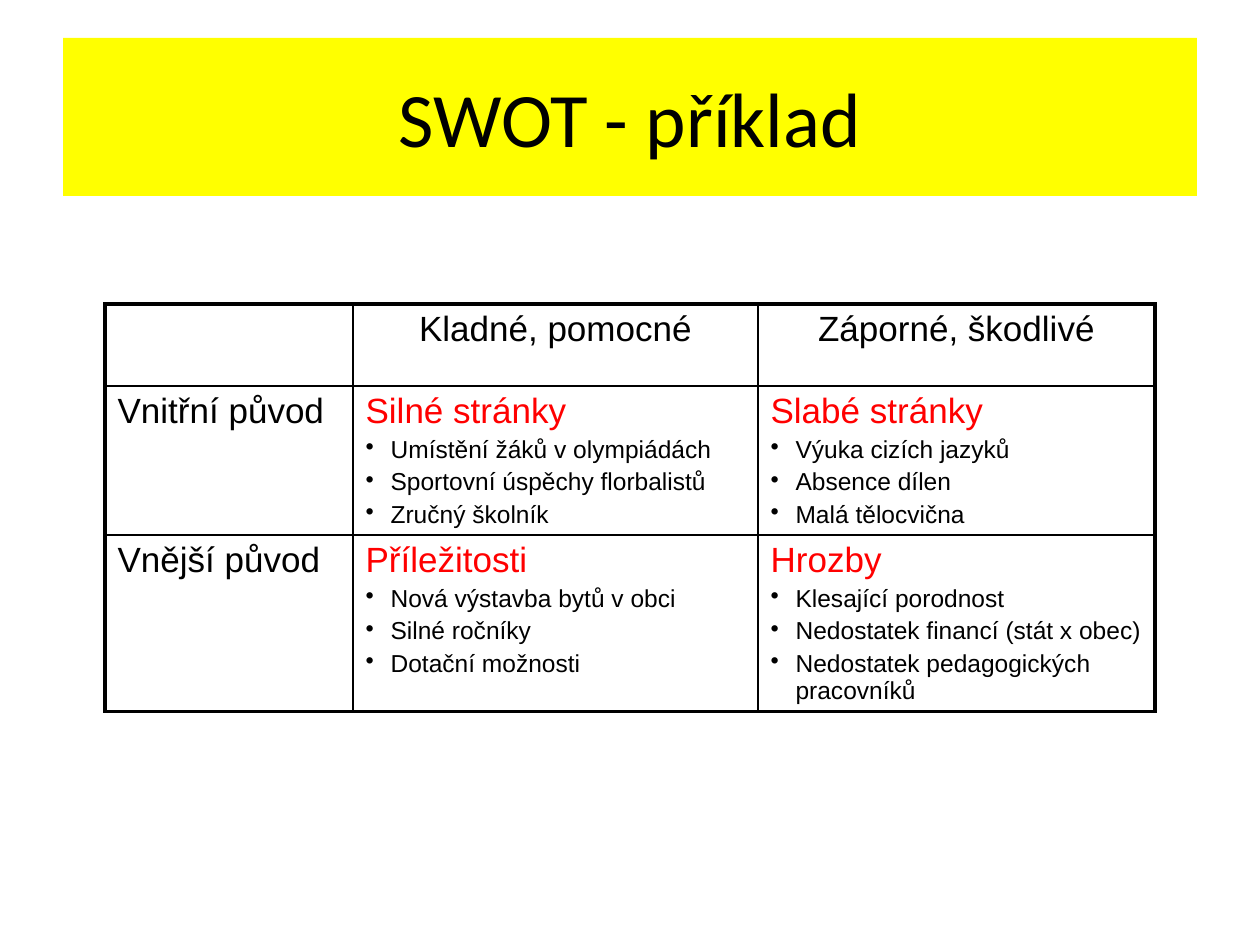
from lxml import etree
from pptx import Presentation
from pptx.dml.color import RGBColor
from pptx.enum.text import MSO_ANCHOR, PP_ALIGN
from pptx.oxml.ns import qn
from pptx.util import Pt

PX = 914400 // 126
CENTER, LEFT, MIDDLE = PP_ALIGN.CENTER, PP_ALIGN.LEFT, MSO_ANCHOR.MIDDLE
YELLOW = RGBColor(0xFF, 0xFF, 0x00)
RED = RGBColor(0xFF, 0x00, 0x00)
BLACK = RGBColor(0x00, 0x00, 0x00)

# Content
TITLE = "SWOT - příklad"
COLUMN_HEADS = ["Kladné, pomocné", "Záporné, škodlivé"]
ORIGINS = [
    ("Vnitřní původ", [
        ("Silné stránky", ["Umístění žáků v olympiádách",
                           "Sportovní úspěchy florbalistů",
                           "Zručný školník"]),
        ("Slabé stránky", ["Výuka cizích jazyků",
                           "Absence dílen",
                           "Malá tělocvična"]),
    ]),
    ("Vnější původ", [
        ("Příležitosti", ["Nová výstavba bytů v obci",
                          "Silné ročníky",
                          "Dotační možnosti"]),
        ("Hrozby", ["Klesající porodnost",
                    "Nedostatek financí (stát x obec)",
                    "Nedostatek pedagogických pracovníků"]),
    ]),
]

# Layout in px
TITLE_BOX = (63, 38, 1134, 158)
TABLE_LEFT, TABLE_TOP, TABLE_HEIGHT = 105, 304, 432
COLUMN_WIDTHS = [248, 405, 397]
ROW_HEIGHTS = [82, 100, 100]
BULLET_INDENT = 25
HEAD_SIZE, ITEM_SIZE = 20, 14
OUTER_LINE, INNER_LINE = 2.25, 1


def write(paragraph, text, size, color=BLACK, font="Arial", align=LEFT, gap=0.2):
    paragraph.text = text
    paragraph.alignment = align
    paragraph.space_before = Pt(size * gap)
    paragraph.font.size = Pt(size)
    paragraph.font.name = font
    paragraph.font.color.rgb = color


def add_bullet(paragraph):
    properties = paragraph._p.get_or_add_pPr()
    properties.set("marL", str(BULLET_INDENT * PX))
    properties.set("indent", str(-BULLET_INDENT * PX))
    bullet = etree.Element(qn("a:buChar"), char="•")
    properties.find(qn("a:spcBef")).addnext(bullet)


def write_quadrant(cell, heading, items):
    frame = cell.text_frame
    write(frame.paragraphs[0], heading, HEAD_SIZE, RED)
    for item in items:
        paragraph = frame.add_paragraph()
        write(paragraph, item, ITEM_SIZE)
        add_bullet(paragraph)


def set_borders(cell, outer_sides):
    properties = cell._tc.get_or_add_tcPr()
    for side, is_outer in outer_sides.items():
        width = Pt(OUTER_LINE if is_outer else INNER_LINE)
        line = etree.SubElement(properties, qn(f"a:ln{side}"), w=str(width))
        fill = etree.SubElement(line, qn("a:solidFill"))
        etree.SubElement(fill, qn("a:srgbClr"), val=str(BLACK))


def main():
    deck = Presentation()
    deck.slide_width, deck.slide_height = 1260 * PX, 945 * PX
    slide = deck.slides.add_slide(deck.slide_layouts[5])

    # Title band
    title = slide.shapes.title
    title.left, title.top, title.width, title.height = (v * PX for v in TITLE_BOX)
    title.fill.solid()
    title.fill.fore_color.rgb = YELLOW
    title.text_frame.vertical_anchor = MIDDLE
    write(title.text_frame.paragraphs[0], TITLE, 44, font="Calibri",
          align=CENTER, gap=0)

    # SWOT grid
    row_count, column_count = len(ROW_HEIGHTS), len(COLUMN_WIDTHS)
    grid = slide.shapes.add_table(
        row_count, column_count, TABLE_LEFT * PX, TABLE_TOP * PX,
        sum(COLUMN_WIDTHS) * PX, TABLE_HEIGHT * PX)
    swot = grid.table
    swot.first_row = swot.horz_banding = False
    for column, width in zip(swot.columns, COLUMN_WIDTHS):
        column.width = width * PX
    for row, height in zip(swot.rows, ROW_HEIGHTS):
        row.height = height * PX
    grid.height = TABLE_HEIGHT * PX

    # Thick frame, thin inner lines
    for r in range(row_count):
        for c in range(column_count):
            cell = swot.cell(r, c)
            set_borders(cell, {"L": c == 0, "R": c == column_count - 1,
                               "T": r == 0, "B": r == row_count - 1})
            cell.fill.background()

    # Headings and quadrants
    for c, head in enumerate(COLUMN_HEADS, 1):
        write(swot.cell(0, c).text_frame.paragraphs[0], head, HEAD_SIZE,
              align=CENTER, gap=0)
    for r, (origin, quadrants) in enumerate(ORIGINS, 1):
        write(swot.cell(r, 0).text_frame.paragraphs[0], origin, HEAD_SIZE)
        for c, (heading, items) in enumerate(quadrants, 1):
            write_quadrant(swot.cell(r, c), heading, items)

    deck.save("out.pptx")


if __name__ == "__main__":
    main()
